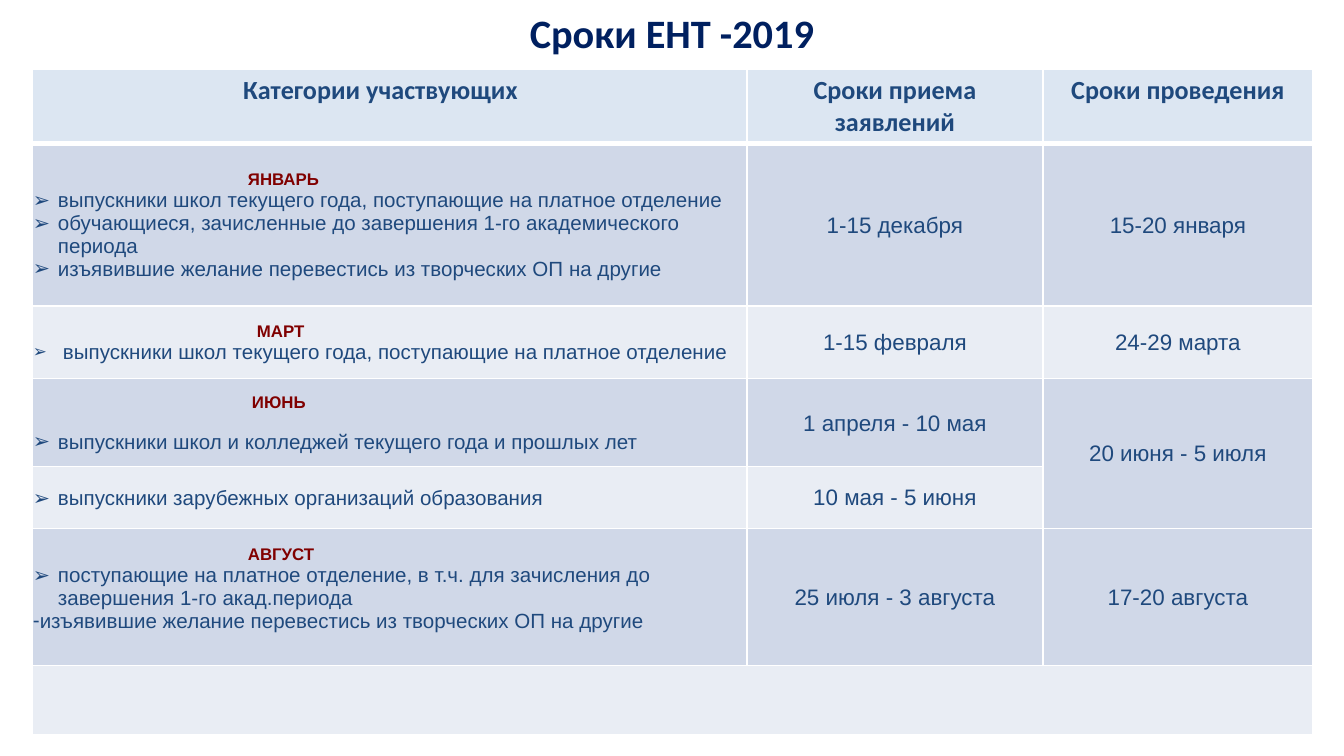
import pptx
import pptx.dml.color
import pptx.enum.text
import pptx.oxml
import pptx.oxml.ns
import pptx.util
from dataclasses import dataclass

ALIGN = pptx.enum.text.PP_ALIGN
ANCHOR = pptx.enum.text.MSO_ANCHOR


@dataclass(frozen=True)
class Theme:
    title: str = "002060"
    text: str = "1F497D"
    month: str = "800000"
    header_fill: str = "DCE6F2"
    bands: tuple = ("D0D8E8", "E9EDF4")
    border: str = "FFFFFF"
    title_font: str = "Calibri"
    body_font: str = "Arial"
    title_size: float = 21.6
    header_size: int = 14
    date_size: int = 12
    item_size: int = 11
    month_size: int = 9


THEME = Theme()
COLS = [715, 296, 270]
ROWS = [72, 162, 73, 88, 62, 137, 69]
HEADERS = ["Категории участвующих", "Сроки приема заявлений", "Сроки проведения"]

# Each session: month, month indent, space after month, items, dates
SESSIONS = [
    ("ЯНВАРЬ", 215, 0,
     ["выпускники школ текущего года, поступающие на платное отделение",
      "обучающиеся, зачисленные до завершения 1-го академического периода",
      "изъявившие желание перевестись из творческих ОП на другие"],
     "1-15 декабря", "15-20 января"),
    ("МАРТ", 224, 0,
     ["выпускники школ текущего года, поступающие на платное отделение"],
     "1-15 февраля", "24-29 марта"),
    ("ИЮНЬ", 219, 10,
     ["выпускники школ и колледжей текущего года и прошлых лет"],
     "1 апреля - 10 мая", "20 июня - 5 июля"),
    (None, 0, 0,
     ["выпускники зарубежных организаций образования"],
     "10 мая - 5 июня", None),
    ("АВГУСТ", 215, 0,
     ["поступающие на платное отделение, в т.ч. для зачисления до завершения 1-го акад.периода",
      "-изъявившие желание перевестись из творческих ОП на другие"],
     "25 июля - 3 августа", "17-20 августа"),
]


def px(n):
    return pptx.util.Emu(round(n * 914400 / 134.4))


def rgb(color):
    return pptx.dml.color.RGBColor.from_string(color)


def write(p, text, size, color, font=THEME.body_font, bold=False, align=ALIGN.CENTER):
    p.text = text
    p.alignment = align
    f = p.runs[0].font
    f.name, f.size, f.bold = font, pptx.util.Pt(size), bold
    f.color.rgb = rgb(color)


def indent(p, left, hanging=0):
    pPr = p._p.get_or_add_pPr()
    pPr.set("marL", str(px(left)))
    pPr.set("indent", str(-px(hanging)))
    return pPr


def bullet(pPr, char, percent=100):
    ns = pptx.oxml.ns.nsdecls("a")
    for tag in (f'buSzPct {ns} val="{percent * 1000}"',
                f'buFont {ns} typeface="Arial"',
                f'buChar {ns} char="{char}"'):
        pPr.append(pptx.oxml.parse_xml(f"<a:{tag}/>"))


def style_cell(cell, fill, bottom=1):
    tcPr = cell._tc.get_or_add_tcPr()
    for side, width in (("L", 1), ("R", 1), ("T", 1), ("B", bottom)):
        tcPr.append(pptx.oxml.parse_xml(
            f'<a:ln{side} {pptx.oxml.ns.nsdecls("a")} w="{width * 12700}"><a:solidFill>'
            f'<a:srgbClr val="{THEME.border}"/></a:solidFill></a:ln{side}>'))
    cell.fill.solid()
    cell.fill.fore_color.rgb = rgb(fill)


def set_margins(cell, left, top, right, bottom):
    cell.margin_left, cell.margin_top = px(left), px(top)
    cell.margin_right, cell.margin_bottom = px(right), px(bottom)


def add_title(slide, text):
    tf = slide.shapes.add_textbox(px(67), px(13), px(1210), px(38)).text_frame
    tf.word_wrap = True
    tf.vertical_anchor = ANCHOR.MIDDLE
    tf.margin_top = tf.margin_bottom = 0
    write(tf.paragraphs[0], text, THEME.title_size, THEME.title, THEME.title_font, True)


def add_grid(slide):
    table = slide.shapes.add_table(len(ROWS), len(COLS), px(32), px(69),
                                   px(sum(COLS)), px(sum(ROWS))).table
    for col, width in zip(table.columns, COLS):
        col.width = px(width)
    for r, height in enumerate(ROWS):
        table.rows[r].height = px(height)
        for c in range(len(COLS)):
            fill = THEME.bands[(r - 1) % 2] if r else THEME.header_fill
            style_cell(table.cell(r, c), fill, 1 if r else 3)
    return table


def fill_header(table):
    for c, text in enumerate(HEADERS):
        cell = table.cell(0, c)
        # The first heading sits a little left of centre
        set_margins(cell, 13, 6, 13 if c else 31, 6)
        write(cell.text_frame.paragraphs[0], text, THEME.header_size, THEME.text,
              THEME.title_font, True)


def fill_categories(cell, month, left, gap, items):
    cell.vertical_anchor = ANCHOR.MIDDLE
    set_margins(cell, 1, 1, 1, 18 if month == "АВГУСТ" else 0)
    tf = cell.text_frame
    p = tf.paragraphs[0]
    if month:
        write(p, month, THEME.month_size, THEME.month, bold=True, align=ALIGN.LEFT)
        indent(p, left)
        p.space_after = pptx.util.Pt(gap)
    for i, item in enumerate(items):
        if month or i:
            p = tf.add_paragraph()
        dash = item.startswith("-")
        write(p, item.removeprefix("-"), THEME.item_size, THEME.text, align=ALIGN.LEFT)
        if dash:
            bullet(indent(p, 0, 25), "-")
        elif month == "МАРТ":
            bullet(indent(p, 30, 30), "➢", 82)
        else:
            bullet(indent(p, 25, 25), "➢")


def fill_date(cell, text):
    cell.vertical_anchor = ANCHOR.MIDDLE
    set_margins(cell, 1, 1, 1, 0)
    write(cell.text_frame.paragraphs[0], text, THEME.date_size, THEME.text)


def main():
    prs = pptx.Presentation()
    prs.slide_width, prs.slide_height = px(1344), px(756)
    slide = prs.slides.add_slide(prs.slide_layouts[6])
    add_title(slide, "Сроки ЕНТ -2019")

    # Schedule table
    table = add_grid(slide)
    fill_header(table)
    for r, (month, left, gap, items, *dates) in enumerate(SESSIONS, start=1):
        fill_categories(table.cell(r, 0), month, left, gap, items)
        for c, date in enumerate(dates, start=1):
            if date:
                fill_date(table.cell(r, c), date)

    # June dates cover two rows; the last row is one empty band
    table.cell(3, 2).merge(table.cell(4, 2))
    table.cell(6, 0).merge(table.cell(6, 2))
    prs.save("out.pptx")


if __name__ == "__main__":
    main()
